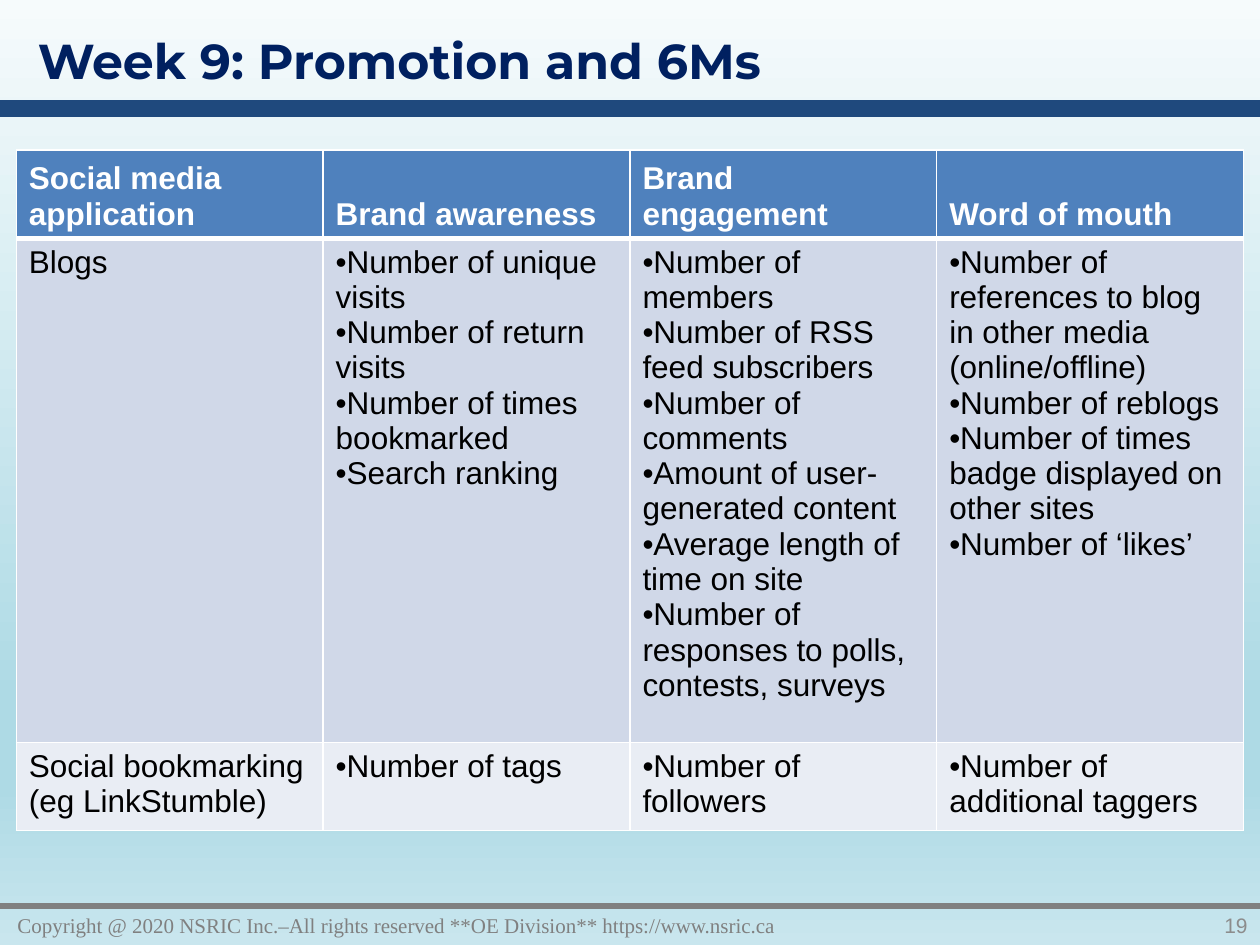
from lxml.etree import SubElement
from pptx import Presentation
from pptx.dml.color import RGBColor
from pptx.enum.text import MSO_ANCHOR, PP_ALIGN
from pptx.oxml.ns import qn
from pptx.util import Inches, Pt

COLORS = {
    "title": "002060", "bar": "1F497D", "gray": "808080", "number": "8C8C8C",
    "header": "4F81BD", "band_dark": "D0D8E8", "band_light": "E9EDF4",
    "white": "FFFFFF", "black": "000000",
    "sky_top": "F6FBFC", "sky": "AEDAE5", "sky_bottom": "C9E6EE",
}


def style(paragraph, font_name, size, color, bold=False):
    font = paragraph.font
    font.name, font.size, font.bold = font_name, Pt(size), bold
    font.color.rgb = RGBColor.from_string(COLORS[color])


def add_border(cell, side, width):
    line = SubElement(cell._tc.get_or_add_tcPr(), qn(f"a:ln{side}"), w=str(Pt(width)))
    fill = SubElement(line, qn("a:solidFill"))
    SubElement(fill, qn("a:srgbClr"), val=COLORS["white"])


presentation = Presentation()
presentation.slide_width, presentation.slide_height = Inches(10), Inches(7.5)
slide = presentation.slides.add_slide(presentation.slide_layouts[5])

background = slide.background.fill
background.gradient()
background.gradient_angle = 270
stop_list = slide._element.find(".//" + qn("a:gsLst"))
for stop in list(stop_list):
    stop_list.remove(stop)
for position, color in [(0, "sky_top"), (74, "sky"), (83, "sky"), (100, "sky_bottom")]:
    stop = SubElement(stop_list, qn("a:gs"), pos=str(position * 1000))
    SubElement(stop, qn("a:srgbClr"), val=COLORS[color])

for top, color, width in [(0.86, "bar", 10), (7.19, "gray", 3)]:
    rule = slide.shapes.add_connector(1, 0, Inches(top), Inches(10), Inches(top))
    rule.line.color.rgb = RGBColor.from_string(COLORS[color])
    rule.line.width = Pt(width)
    SubElement(rule._element.spPr, qn("a:effectLst"))

title = slide.shapes.title
title.left, title.top = Inches(0.2), Inches(0.19)
title.width, title.height = Inches(8.76), Inches(0.57)
title.text_frame.text = "Week 9: Promotion and 6Ms"
title.text_frame.vertical_anchor = MSO_ANCHOR.TOP
title.text_frame.paragraphs[0].alignment = PP_ALIGN.LEFT
style(title.text_frame.paragraphs[0], "Montserrat", 28, "title", True)

footers = [
    (0.04, 8.27, "Copyright @ 2020 NSRIC Inc.–All rights reserved **OE Division** https://www.nsric.ca",
     "Times New Roman", "gray", PP_ALIGN.LEFT),
    (8.59, 1.41, "19", "Arial", "number", PP_ALIGN.RIGHT),
]
for left, width, text, font_name, color, alignment in footers:
    footer = slide.shapes.add_textbox(Inches(left), Inches(7.19), Inches(width), Inches(0.31))
    footer.text_frame.word_wrap = True
    footer.text_frame.vertical_anchor = MSO_ANCHOR.MIDDLE
    footer.text_frame.text = text
    paragraph = footer.text_frame.paragraphs[0]
    paragraph.alignment = alignment
    style(paragraph, font_name, 12, color)

rows = [
    [["Social media application"], ["Brand awareness"], ["Brand engagement"], ["Word of mouth"]],
    [
        ["Blogs"],
        ["Number of unique visits", "Number of return visits",
         "Number of times bookmarked", "Search ranking"],
        ["Number of members", "Number of RSS feed subscribers", "Number of comments",
         "Amount of user-generated content", "Average length of time on site",
         "Number of responses to polls, contests, surveys"],
        ["Number of references to blog in other media (online/offline)",
         "Number of reblogs", "Number of times badge displayed on other sites",
         "Number of ‘likes’"],
    ],
    [["Social bookmarking (eg LinkStumble)"], ["Number of tags"],
     ["Number of followers"], ["Number of additional taggers"]],
]
row_heights = [0.7, 4, 0.7]
row_fills = ["header", "band_dark", "band_light"]

table = slide.shapes.add_table(
    len(rows), 4, Inches(0.13), Inches(1.19), Inches(9.74), Inches(sum(row_heights))
).table
for row_index, row in enumerate(rows):
    table.rows[row_index].height = Inches(row_heights[row_index])
    is_header = row_index == 0
    for column_index, lines in enumerate(row):
        cell = table.cell(row_index, column_index)
        for side in "LRTB":
            is_thick = (row_index, side) in [(0, "B"), (1, "T")]
            add_border(cell, side, 3 if is_thick else 1)
        cell.fill.solid()
        cell.fill.fore_color.rgb = RGBColor.from_string(COLORS[row_fills[row_index]])
        cell.vertical_anchor = MSO_ANCHOR.BOTTOM if is_header else MSO_ANCHOR.TOP
        cell.text_frame.text = "\n".join(lines)
        for paragraph in cell.text_frame.paragraphs:
            if not is_header and column_index > 0:
                properties = paragraph._p.get_or_add_pPr()
                SubElement(properties, qn("a:buFont"), typeface="Arial")
                SubElement(properties, qn("a:buChar"), char="•")
            style(paragraph, "Arial", 18, "white" if is_header else "black", is_header)

presentation.save("out.pptx")
